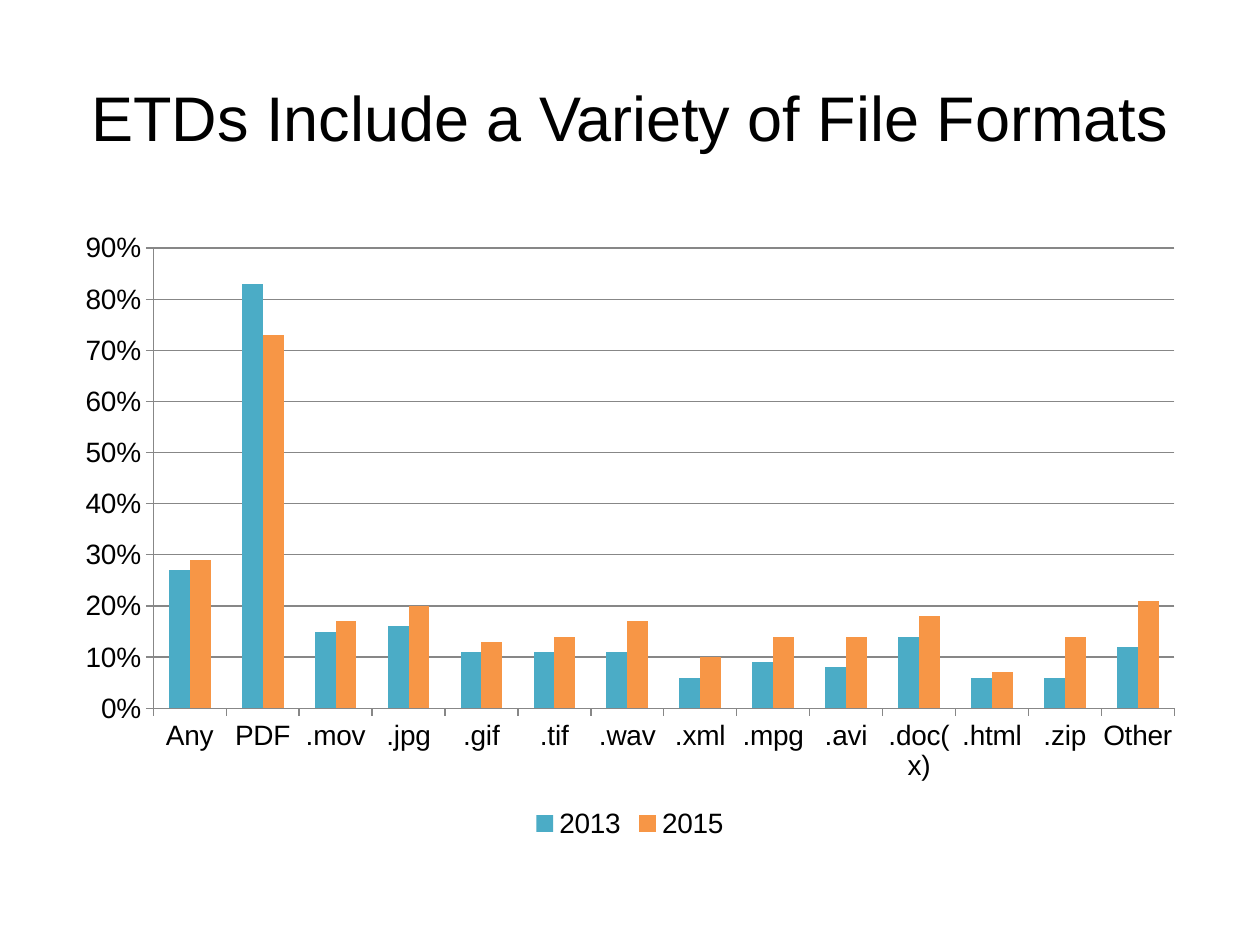
import pptx
import pptx.chart.data
import pptx.dml.color
import pptx.enum.chart
import pptx.enum.text
import pptx.util
from pptx.util import Inches

# Content
TITLE = "ETDs Include a Variety of File Formats"
FORMATS = ["Any", "PDF", ".mov", ".jpg", ".gif", ".tif", ".wav",
           ".xml", ".mpg", ".avi", ".doc(x)", ".html", ".zip", "Other"]
SHARES = {
    "2013": [0.27, 0.83, 0.15, 0.16, 0.11, 0.11, 0.11,
             0.06, 0.09, 0.08, 0.14, 0.06, 0.06, 0.12],
    "2015": [0.29, 0.73, 0.17, 0.20, 0.13, 0.14, 0.17,
             0.10, 0.14, 0.14, 0.18, 0.07, 0.14, 0.21],
}

THEME = {
    "font": "Arial",
    "title_size": 36,
    "chart_size": 16,
    "text": "000000",
    "background": "FFFFFF",
    "axis": "878787",
    "2013": "4BACC6",
    "2015": "F79646",
}

# Layout in inches
PAGE_WIDTH, PAGE_HEIGHT, MARGIN = 10, 7.5, 0.5
CONTENT_WIDTH = PAGE_WIDTH - 2 * MARGIN
TITLE_TOP, TITLE_HEIGHT = 0.3, 1.25
CHART_TOP, CHART_HEIGHT = 1.75, 4.95


def color(name):
    return pptx.dml.color.RGBColor.from_string(THEME[name])


def style_font(font, size):
    font.name = THEME["font"]
    font.size = pptx.util.Pt(THEME[size])
    font.color.rgb = color("text")


def style_line(line):
    line.color.rgb = color("axis")
    line.width = pptx.util.Pt(0.75)


def add_title(page):
    box = page.shapes.add_textbox(Inches(MARGIN), Inches(TITLE_TOP),
                                  Inches(CONTENT_WIDTH), Inches(TITLE_HEIGHT))
    frame = box.text_frame
    frame.word_wrap = True
    frame.vertical_anchor = pptx.enum.text.MSO_ANCHOR.MIDDLE
    para = frame.paragraphs[0]
    para.alignment = pptx.enum.text.PP_ALIGN.CENTER
    span = para.add_run()
    span.text = TITLE
    style_font(span.font, "title_size")


def add_format_chart(page):
    data = pptx.chart.data.CategoryChartData(number_format="0%")
    data.categories = FORMATS
    for year, shares in SHARES.items():
        data.add_series(year, shares)
    chart = page.shapes.add_chart(
        pptx.enum.chart.XL_CHART_TYPE.COLUMN_CLUSTERED,
        Inches(MARGIN), Inches(CHART_TOP),
        Inches(CONTENT_WIDTH), Inches(CHART_HEIGHT), data).chart
    chart.has_title = False
    style_font(chart.font, "chart_size")

    # Columns
    plot = chart.plots[0]
    plot.gap_width = 150
    plot.overlap = 0
    plot.vary_by_categories = False
    for series in plot.series:
        series.format.fill.solid()
        series.format.fill.fore_color.rgb = color(series.name)

    # Axes and gridlines
    for axis in (chart.category_axis, chart.value_axis):
        axis.major_tick_mark = pptx.enum.chart.XL_TICK_MARK.OUTSIDE
        axis.minor_tick_mark = pptx.enum.chart.XL_TICK_MARK.NONE
        style_line(axis.format.line)
    values = chart.value_axis
    values.minimum_scale, values.maximum_scale, values.major_unit = 0, 0.9, 0.1
    values.tick_labels.number_format = "0%"
    values.tick_labels.number_format_is_linked = False
    values.has_major_gridlines = True
    style_line(values.major_gridlines.format.line)

    # Legend
    chart.has_legend = True
    chart.legend.position = pptx.enum.chart.XL_LEGEND_POSITION.BOTTOM
    chart.legend.include_in_layout = False


def main():
    deck = pptx.Presentation()
    deck.slide_width = Inches(PAGE_WIDTH)
    deck.slide_height = Inches(PAGE_HEIGHT)
    page = deck.slides.add_slide(deck.slide_layouts[6])
    page.background.fill.solid()
    page.background.fill.fore_color.rgb = color("background")
    add_title(page)
    add_format_chart(page)
    deck.save("out.pptx")


if __name__ == "__main__":
    main()
